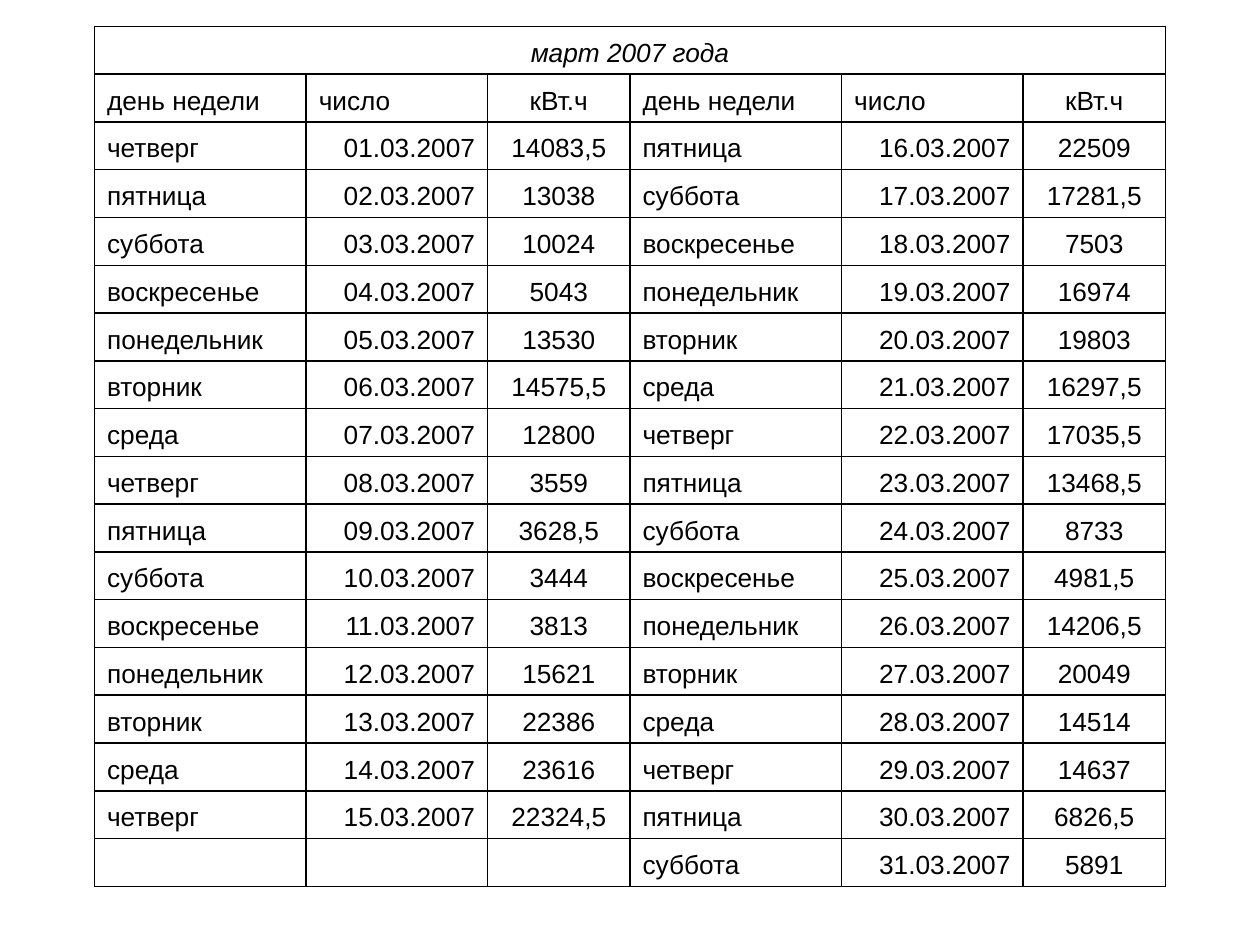
"""Build a slide with a table of daily electricity use in March 2007."""
from lxml import etree
from pptx import Presentation
from pptx.dml.color import RGBColor
from pptx.enum.text import MSO_ANCHOR, PP_ALIGN
from pptx.oxml import parse_xml
from pptx.oxml.ns import nsdecls, qn
from pptx.util import Inches, Pt

LEFT, CENTER, RIGHT = PP_ALIGN.LEFT, PP_ALIGN.CENTER, PP_ALIGN.RIGHT
BOTTOM = MSO_ANCHOR.BOTTOM
BLACK = RGBColor(0, 0, 0)

TITLE = "март 2007 года"
HEADERS = ["день недели", "число", "кВт.ч"]
WEEKDAYS = ["понедельник", "вторник", "среда", "четверг", "пятница", "суббота", "воскресенье"]
FIRST_WEEKDAY = 3
FIRST_HALF = ["14083,5", "13038", "10024", "5043", "13530", "14575,5", "12800", "3559",
              "3628,5", "3444", "3813", "15621", "22386", "23616", "22324,5"]
SECOND_HALF = ["22509", "17281,5", "7503", "16974", "19803", "16297,5", "17035,5", "13468,5",
               "8733", "4981,5", "14206,5", "20049", "14514", "14637", "6826,5", "5891"]

TABLE_LEFT, TABLE_TOP, TABLE_WIDTH, TABLE_HEIGHT = 0.75, 0.21, 8.5, 6.83
COLUMN_WIDTHS = [1.68, 1.44, 1.13] * 2
HEADER_ALIGNMENTS = [LEFT, LEFT, CENTER] * 2
DAY_ALIGNMENTS = [LEFT, RIGHT, CENTER] * 2
HANGING_INDENT = Inches(0.38)
TEXT_FORMAT = {"name": "Arial", "size": Pt(15)}


def day_cells(day, usage):
    """Return weekday, date and usage for one day of the month."""
    weekday = WEEKDAYS[(FIRST_WEEKDAY + day - 1) % len(WEEKDAYS)]
    return [weekday, f"{day:02}.03.2007", usage]


def table_rows():
    """Return the text of every row, with the two halves side by side."""
    first = [day_cells(day, usage) for day, usage in enumerate(FIRST_HALF, 1)]
    second = [day_cells(day, usage) for day, usage in enumerate(SECOND_HALF, len(first) + 1)]
    first.append([""] * len(HEADERS))
    title_row = [TITLE] + [""] * (len(COLUMN_WIDTHS) - 1)
    return [title_row, HEADERS * 2] + [left + right for left, right in zip(first, second)]


def add_borders(cell):
    """Draw a thin black line on each side of a cell."""
    properties = cell._tc.get_or_add_tcPr()
    for side in ("lnL", "lnR", "lnT", "lnB"):
        properties.append(parse_xml(
            f'<a:{side} {nsdecls("a")} w="{Pt(1)}"><a:solidFill>'
            f'<a:srgbClr val="{BLACK}"/></a:solidFill></a:{side}>'))


def fill_cell(cell, text, alignment, italic):
    """Write and format the text of a cell."""
    add_borders(cell)
    cell.fill.background()
    cell.vertical_anchor = BOTTOM
    paragraph = cell.text_frame.paragraphs[0]
    if not text:
        etree.SubElement(paragraph._p, qn("a:endParaRPr"), sz="1500")
        return
    paragraph.alignment = alignment
    properties = paragraph._p.get_or_add_pPr()
    properties.set("marL", str(HANGING_INDENT))
    properties.set("indent", str(-HANGING_INDENT))
    run = paragraph.add_run()
    run.text = text
    for attribute, value in TEXT_FORMAT.items():
        setattr(run.font, attribute, value)
    run.font.italic = italic
    run.font.color.rgb = BLACK


def main():
    presentation = Presentation()
    presentation.slide_width, presentation.slide_height = Inches(10), Inches(7.5)
    slide = presentation.slides.add_slide(presentation.slide_layouts[6])
    rows = table_rows()
    table = slide.shapes.add_table(
        len(rows), len(COLUMN_WIDTHS), Inches(TABLE_LEFT), Inches(TABLE_TOP),
        Inches(TABLE_WIDTH), Inches(TABLE_HEIGHT)).table
    table.first_row = table.horz_banding = False
    for column, width in zip(table.columns, COLUMN_WIDTHS):
        column.width = Inches(width)
    table.cell(0, 0).merge(table.cell(0, len(COLUMN_WIDTHS) - 1))
    alignments = [[CENTER] * len(COLUMN_WIDTHS), HEADER_ALIGNMENTS]
    alignments += [DAY_ALIGNMENTS] * (len(rows) - len(alignments))
    for row_index, (texts, row_alignments) in enumerate(zip(rows, alignments)):
        for column_index, (text, alignment) in enumerate(zip(texts, row_alignments)):
            fill_cell(table.cell(row_index, column_index), text, alignment, row_index == 0)
    presentation.save("out.pptx")


if __name__ == "__main__":
    main()
